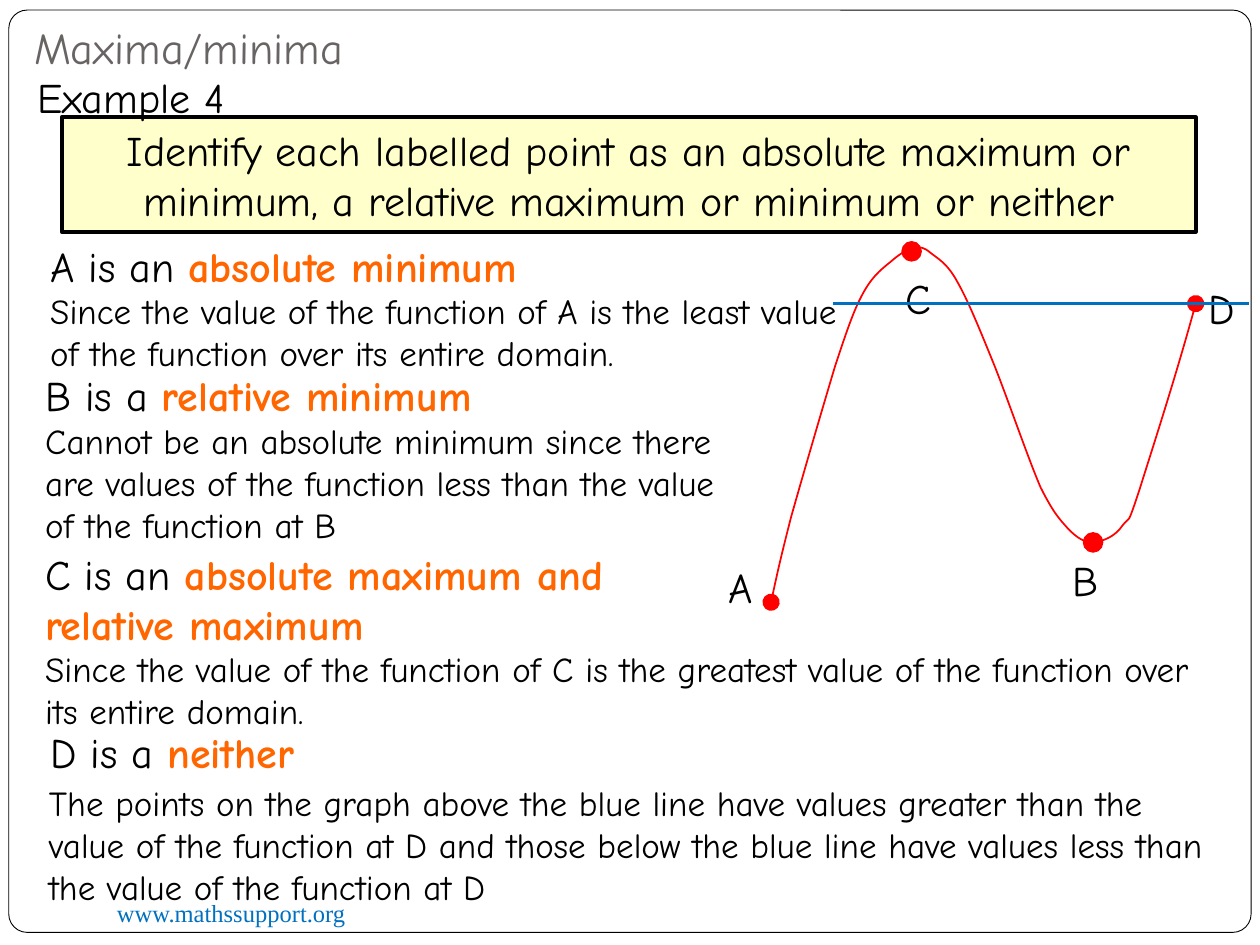
from lxml.etree import SubElement
from pptx import Presentation
from pptx.dml.color import RGBColor
from pptx.enum.shapes import MSO_CONNECTOR, MSO_SHAPE
from pptx.enum.text import MSO_ANCHOR, MSO_AUTO_SIZE, PP_ALIGN
from pptx.oxml.ns import qn
from pptx.util import Inches, Pt

COLORS = {
    "paper": "FFFFFF", "ink": "000000", "title": "696464", "question": "FFFFCC",
    "answer": "FF6600", "curve": "FF0000", "level": "0070C0",
}
TITLE_ONLY = 5

# Start point, then two control points and an end point for each curve piece
CURVE_START = (9.49, 2.41)
CURVE_PIECES = [
    [(9.33, 3), (9.13, 3.61), (9.04, 3.9)],
    [(8.94, 4.2), (8.97, 4.09), (8.91, 4.17)],
    [(8.85, 4.26), (8.75, 4.3), (8.68, 4.3)],
    [(8.61, 4.31), (8.55, 4.27), (8.48, 4.2)],
    [(8.42, 4.13), (8.37, 4.09), (8.26, 3.87)],
    [(8.16, 3.64), (7.99, 3.14), (7.88, 2.87)],
    [(7.77, 2.6), (7.68, 2.38), (7.6, 2.24)],
    [(7.52, 2.09), (7.44, 2.05), (7.39, 2.01)],
    [(7.33, 1.96), (7.31, 1.96), (7.26, 1.97)],
    [(7.21, 1.98), (7.16, 2), (7.09, 2.06)],
    [(7.02, 2.12), (6.94, 2.17), (6.86, 2.31)],
    [(6.78, 2.45), (6.73, 2.6), (6.63, 2.9)],
    [(6.54, 3.2), (6.37, 3.78), (6.28, 4.1)],
    [(6.2, 4.41), (6.16, 4.59), (6.12, 4.78)],
]

# Left, top, width, height, wrap, opening words, highlighted answer
ANSWERS = [
    (0.3, 1.86, 4.17, 0.5, False, "A is an ", "absolute minimum"),
    (0.26, 2.88, 4.58, 0.5, True, "B is a ", "relative minimum"),
    (0.26, 4.3, 5.05, 0.91, True, "C is an ", "absolute maximum and relative maximum"),
    (0.3, 5.72, 2.34, 0.5, False, "D is a ", "neither"),
]
REASONS = [
    (0.3, 2.25, 6.55, 0.77, "Since the value of the function of A is the least value "
     "of the function over its entire domain."),
    (0.26, 3.28, 5.76, 1.11, "Cannot be an absolute minimum since there are values of "
     "the function less than the value of the function at B"),
    (0.26, 5.09, 9.47, 0.77, "Since the value of the function of C is the greatest value "
     "of the function over its entire domain."),
    (0.29, 6.15, 9.45, 1.11, "The points on the graph above the blue line have values "
     "greater than the value of the function at D and those below the blue line have "
     "values less than the value of the function at D"),
]
POINT_LABELS = {"A": (5.68, 4.41), "B": (8.41, 4.35), "C": (7.09, 2.11), "D": (9.49, 2.19)}
TURNING_POINTS = [(8.6, 4.23), (7.16, 1.92)]


def color(name):
    return RGBColor.from_string(COLORS[name])


def inches(*values):
    return [Inches(value) for value in values]


class SlideWriter:
    font = "Comic Neue"
    heading_size = 24
    body_size = 20

    def __init__(self, slide):
        self.slide = slide
        self.shapes = slide.shapes

    def style(self, span, size, ink="ink", bold=None, font=None):
        span.font.name = font or self.font
        span.font.size = Pt(size)
        span.font.bold = bold
        span.font.color.rgb = color(ink)

    def title(self, text, place):
        title = self.shapes.title
        title.left, title.top, title.width, title.height = inches(*place)
        frame = title.text_frame
        frame.text = text
        frame.auto_size = MSO_AUTO_SIZE.NONE
        frame.vertical_anchor = MSO_ANCHOR.BOTTOM
        frame.margin_bottom = Inches(0.1)
        frame.paragraphs[0].alignment = PP_ALIGN.LEFT
        self.style(frame.paragraphs[0].runs[0], 25.2, "title")
        # The frame is filled, so the title has to lie in front of it
        self.shapes._spTree.append(title._element)

    def text(self, text, place, size=heading_size, wrap=True, answer="", **look):
        box = self.shapes.add_textbox(*inches(*place))
        box.text_frame.word_wrap = wrap
        paragraph = box.text_frame.paragraphs[0]
        paragraph.text = text
        self.style(paragraph.runs[0], size, **look)
        if answer:
            span = paragraph.add_run()
            span.text = answer
            self.style(span, size, "answer", bold=True)

    def shape(self, preset, place, fill, line, line_width):
        shape = self.shapes.add_shape(preset, *inches(*place))
        shape.shadow.inherit = False
        shape.fill.solid()
        shape.fill.fore_color.rgb = color(fill)
        shape.line.color.rgb = color(line)
        shape.line.width = Pt(line_width)
        return shape

    def question(self, text, place):
        box = self.shape(MSO_SHAPE.RECTANGLE, place, "question", "ink", 2.25)
        frame = box.text_frame
        frame.word_wrap = True
        frame.text = text
        frame.paragraphs[0].alignment = PP_ALIGN.CENTER
        self.style(frame.paragraphs[0].runs[0], self.heading_size)

    def curve(self, start, pieces):
        """Draw a chain of Bezier pieces with a round dot at both ends."""
        builder = self.shapes.build_freeform(*inches(*start))
        points = [inches(*point) for piece in pieces for point in piece]
        builder.add_line_segments(points, close=False)
        curve = builder.convert_to_shape()
        curve.shadow.inherit = False
        curve.fill.background()
        curve.line.color.rgb = color("curve")
        curve.line.width = Pt(1)

        # Join every three straight segments into one cubic Bezier
        outline = next(curve._element.iter(qn("a:path")))
        segments = outline.findall(qn("a:lnTo"))
        for first in range(0, len(segments), 3):
            bezier = SubElement(outline, qn("a:cubicBezTo"))
            for segment in segments[first:first + 3]:
                bezier.append(segment[0])
                outline.remove(segment)

        line = curve.line._get_or_add_ln()
        for end in ("a:headEnd", "a:tailEnd"):
            SubElement(line, qn(end), type="oval", w="lg", len="lg")

    def level_line(self, start, end):
        line = self.shapes.add_connector(MSO_CONNECTOR.STRAIGHT, *inches(*start, *end))
        line.line.color.rgb = color("level")
        line.line.width = Pt(2)
        SubElement(line._element.spPr, qn("a:effectLst"))


def main():
    deck = Presentation()
    deck.slide_width, deck.slide_height = inches(10, 7.5)
    writer = SlideWriter(deck.slides.add_slide(deck.slide_layouts[TITLE_ONLY]))

    frame = writer.shape(MSO_SHAPE.ROUNDED_RECTANGLE, (0.07, 0.08, 9.86, 7.32),
                         "paper", "ink", 0.5)
    frame.adjustments[0] = 0.02
    writer.text("www.mathssupport.org", (0.83, 7.08, 3.25, 0.34), 14,
                ink="level", font="Times New Roman")
    writer.question("Identify each labelled point as an absolute maximum or minimum, "
                    "a relative maximum or minimum or neither", (0.49, 0.93, 9, 0.91))

    writer.curve(CURVE_START, CURVE_PIECES)
    for name, (left, top) in POINT_LABELS.items():
        writer.text(name, (left, top, 0.45, 0.5))
    for left, top in TURNING_POINTS:
        writer.shape(MSO_SHAPE.OVAL, (left, top, 0.15, 0.15), "curve", "curve", 1)

    for *place, wrap, opening, answer in ANSWERS:
        writer.text(opening, place, wrap=wrap, answer=answer)
    for *place, reason in REASONS:
        writer.text(reason, place, writer.body_size)

    writer.level_line((9.91, 2.41), (6.61, 2.41))
    writer.text("Example 4", (0.2, 0.52, 1.81, 0.5), wrap=False)
    writer.title("Maxima/minima", (0.17, 0.13, 9, 0.55))
    deck.save("out.pptx")


if __name__ == "__main__":
    main()
